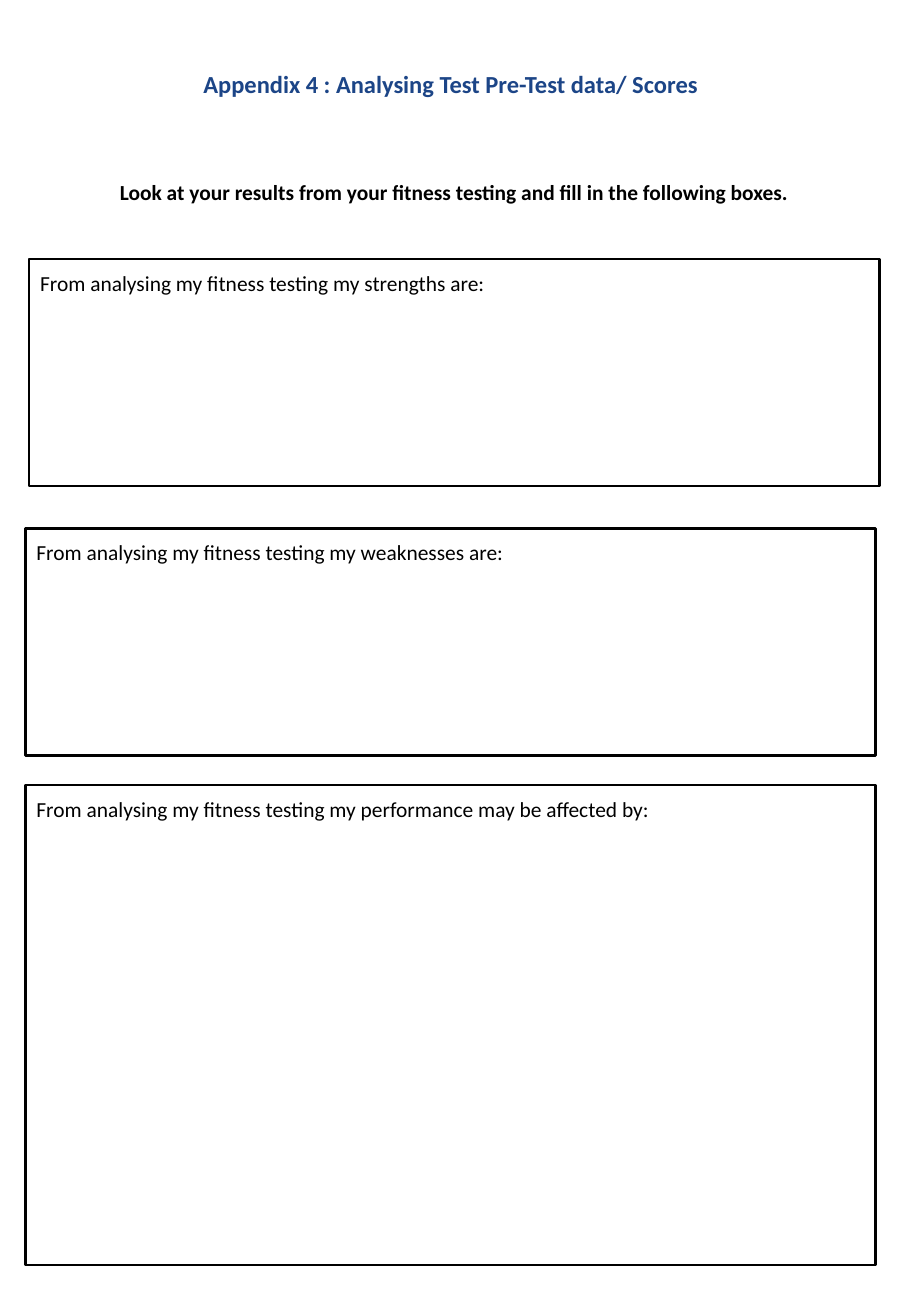
from pptx import Presentation
from pptx.dml.color import RGBColor
from pptx.enum.shapes import MSO_SHAPE
from pptx.enum.text import MSO_ANCHOR, MSO_AUTO_SIZE, PP_ALIGN
from pptx.util import Pt

PX = 9144
RECT = MSO_SHAPE.RECTANGLE
TOP, MIDDLE = MSO_ANCHOR.TOP, MSO_ANCHOR.MIDDLE
LEFT, CENTER = PP_ALIGN.LEFT, PP_ALIGN.CENTER
NO_FIT = MSO_AUTO_SIZE.NONE


def rgb(value):
    return RGBColor.from_string(value)


def write(sp, text, size=12.7, color="000000", bold=False, align=LEFT, anchor=TOP, inset=9):
    tf = sp.text_frame
    tf.word_wrap = True
    tf.auto_size = NO_FIT
    tf.vertical_anchor = anchor
    tf.margin_left = tf.margin_right = tf.margin_top = tf.margin_bottom = inset * PX
    p = tf.paragraphs[0]
    p.text = text
    p.alignment = align
    p.font.name = "Calibri"
    p.font.size = Pt(size)
    p.font.bold = bold
    p.font.color.rgb = rgb(color)
    return p


prs = Presentation()
prs.slide_width = 750 * PX
prs.slide_height = 1083 * PX
s = prs.slides.add_slide(prs.slide_layouts[5])
s.background.fill.solid()
s.background.fill.fore_color.rgb = rgb("FFFFFF")

title = s.shapes.title
title.left, title.top, title.width, title.height = 21 * PX, 23 * PX, 700 * PX, 92 * PX
title.fill.solid()
title.fill.fore_color.rgb = rgb("FFFFFF")
p = write(title, "Appendix 4 : Analysing Test Pre-Test data/ Scores",
          14.5, "1C4587", True, CENTER, MIDDLE, 5)
p.space_before = Pt(6.3)

intro = s.shapes.add_textbox(24 * PX, 138 * PX, 700 * PX, 96 * PX)
write(intro, "Look at your results from your fitness testing and fill in the following boxes.",
      bold=True, align=CENTER)

answers = [
    (24, 213, 187, "strengths are:"),
    (21, 435, 187, "weaknesses are:"),
    (21, 646, 395, "performance may be affected by:"),
]
for x, y, h, topic in answers:
    sp = s.shapes.add_shape(RECT, x * PX, y * PX, 700 * PX, h * PX)
    sp.shadow.inherit = False
    sp.fill.background()
    sp.line.color.rgb = rgb("000000")
    sp.line.width = Pt(1.5)
    write(sp, f"From analysing my fitness testing my {topic}")

prs.save("out.pptx")
